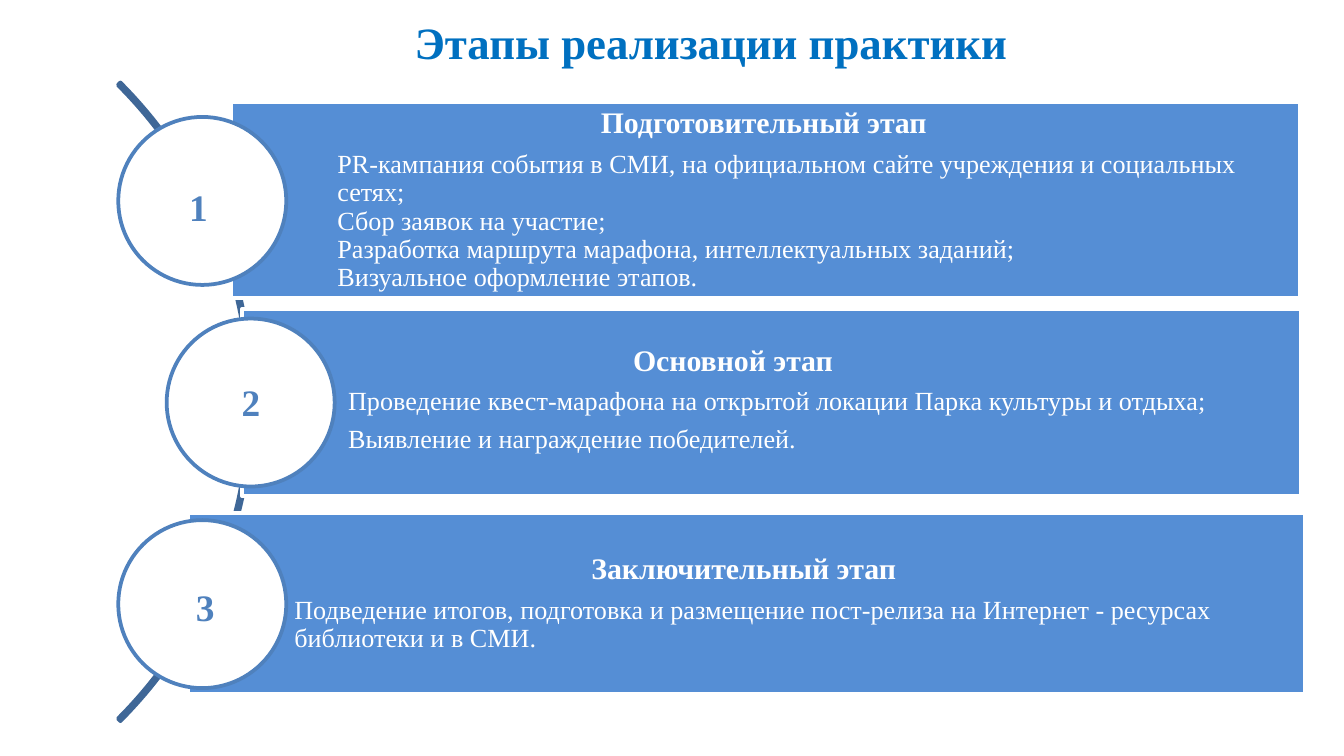
from pptx import Presentation
from pptx.util import Inches, Pt
from pptx.dml.color import RGBColor
from pptx.enum.shapes import MSO_SHAPE
from pptx.enum.text import PP_ALIGN, MSO_ANCHOR

theme = {
    "font": "Times New Roman",
    "title": RGBColor(0x00, 0x70, 0xC0),
    "arc": RGBColor(0x3F, 0x67, 0x97),
    "bar": RGBColor(0x55, 0x8E, 0xD5),
    "ring": RGBColor(0x4F, 0x81, 0xBD),
    "white": RGBColor(0xFF, 0xFF, 0xFF),
    "sizes": {"title": 24, "digit": 20, "head": 16, "body": 14},
}

stages = [
    {"bar": (1.72, 0.76, 7.95, 1.46), "ring": 0.88, "digit": (1.31, 1.32),
     "head": "Подготовительный этап", "indent": 1.96, "gap": 0, "base": 0.03,
     "body": ["PR-кампания события в СМИ, на официальном сайте учреждения и социальных сетях;",
              "Сбор заявок на участие;",
              "Разработка маршрута марафона, интеллектуальных заданий;",
              "Визуальное оформление этапов."]},
    {"bar": (1.8, 2.3, 7.88, 1.39), "ring": 1.24, "digit": (1.7, 2.77),
     "head": "Основной этап", "indent": 2.12, "gap": 0.35, "base": 0.07,
     "body": ["Проведение квест-марафона на открытой локации Парка культуры и отдыха;",
              "Выявление и награждение победителей."]},
    {"bar": (1.4, 3.82, 8.31, 1.34), "ring": 0.88, "digit": (1.36, 4.3),
     "head": "Заключительный этап", "indent": 2.21, "gap": 0.35, "base": 0.03,
     "body": ["Подведение итогов, подготовка и размещение пост-релиза на Интернет - ресурсах библиотеки и в СМИ."]},
]


def write(para, text, size, color, bold=True):
    para.text = text
    font = para.runs[0].font
    font.name = theme["font"]
    font.size = Pt(theme["sizes"][size])
    font.bold = bold
    font.color.rgb = color


def draw(kind, box, fill, line):
    shape = slide.shapes.add_shape(kind, *map(Inches, box))
    shape.shadow.inherit = False
    if fill is None:
        shape.fill.background()
    else:
        shape.fill.solid()
        shape.fill.fore_color.rgb = fill
    shape.line.color.rgb = line
    shape.line.width = Pt(2)
    return shape


prs = Presentation()
prs.slide_width = Inches(10)
prs.slide_height = Inches(10) * 9 // 16
slide = prs.slides.add_slide(prs.slide_layouts[5])

title = slide.shapes.title
title.left, title.top, title.width, title.height = map(Inches, (2.96, 0.06, 4.66, 0.5))
title.text_frame.word_wrap = False
title.text_frame.vertical_anchor = MSO_ANCHOR.TOP
write(title.text_frame.paragraphs[0], "Этапы реализации практики", "title", theme["title"])
title.text_frame.paragraphs[0].alignment = PP_ALIGN.CENTER

arc = draw(MSO_SHAPE.BLOCK_ARC, (-4.84, -0.37, 6.72, 6.72), None, theme["arc"])
for index, value in enumerate((189, 27, 0.004)):
    arc.adjustments[index] = value

for index, stage in enumerate(stages):
    bar = draw(MSO_SHAPE.RECTANGLE, stage["bar"], theme["bar"], theme["white"])
    frame = bar.text_frame
    frame.word_wrap = True
    frame.vertical_anchor = MSO_ANCHOR.MIDDLE
    frame.margin_left = Inches(0.79)
    frame.margin_top = frame.margin_right = Inches(0.03)
    frame.margin_bottom = Inches(stage["base"])
    head = frame.paragraphs[0]
    write(head, stage["head"], "head", theme["white"])
    head.space_after = Pt(0.35 * theme["sizes"]["head"])
    head._p.get_or_add_pPr().set("indent", str(Inches(stage["indent"])))
    for text in stage["body"]:
        para = frame.add_paragraph()
        write(para, text, "body", theme["white"], False)
        para.space_after = Pt(stage["gap"] * theme["sizes"]["body"])
    for para in frame.paragraphs:
        para.alignment = PP_ALIGN.LEFT
        para.line_spacing = 0.9

    draw(MSO_SHAPE.OVAL, (stage["ring"], 0.87 + 1.5 * index, 1.25, 1.25),
         theme["white"], theme["ring"])
    left, top = stage["digit"]
    digit = slide.shapes.add_textbox(Inches(left), Inches(top), Inches(0.34), Inches(0.44))
    digit.text_frame.word_wrap = False
    write(digit.text_frame.paragraphs[0], str(index + 1), "digit", theme["ring"])

prs.save("out.pptx")
